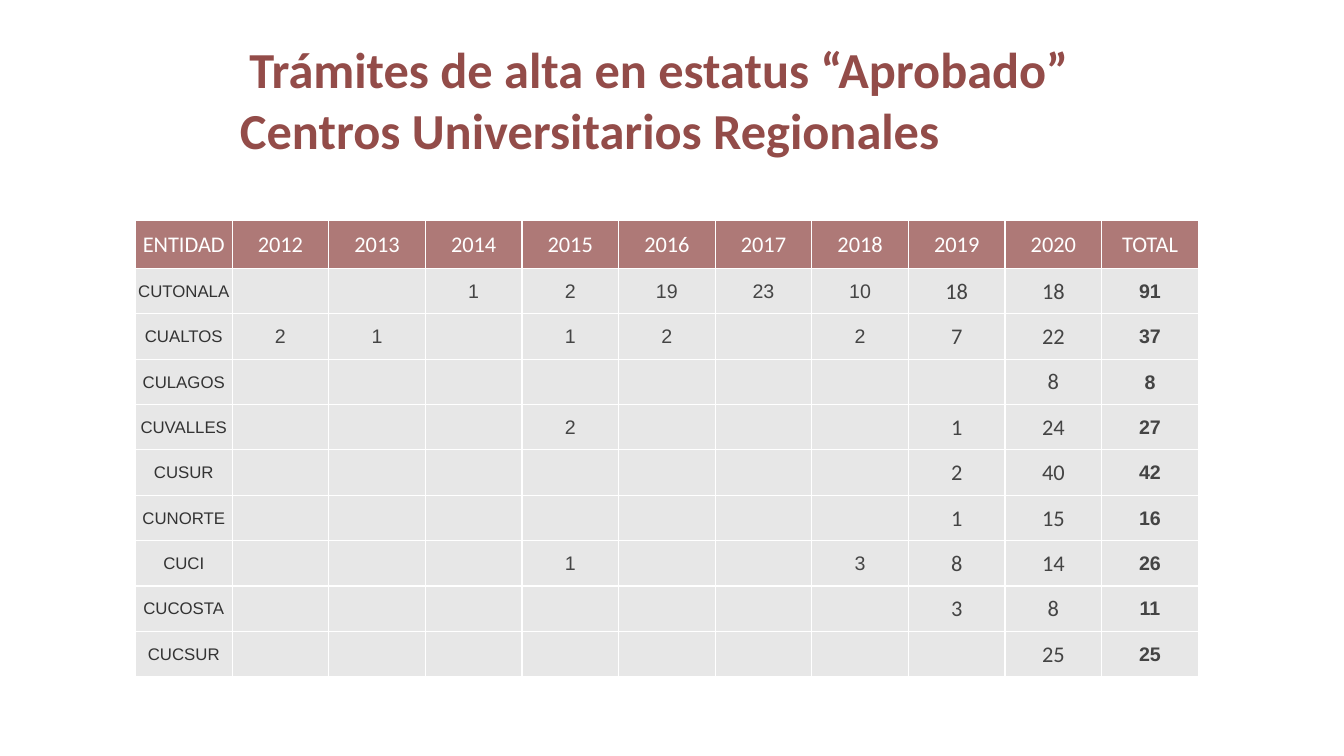
from dataclasses import dataclass

from lxml.etree import SubElement
from pptx import Presentation
from pptx.dml.color import RGBColor
from pptx.enum.text import MSO_ANCHOR as Anchor, MSO_AUTO_SIZE as AutoSize, PP_ALIGN as Align
from pptx.oxml.ns import qn
from pptx.util import Inches, Pt

SLIDE_WIDTH, SLIDE_HEIGHT = Inches(13.33), Inches(7.5)
TITLE_ONLY_LAYOUT = 5
YEARS = range(2012, 2021)
HEADER_FILL, BODY_FILL, BORDER = "AE7977", "E7E7E7", "FFFFFF"


@dataclass(frozen=True)
class TextStyle:
    size: int
    font: str
    color: str
    bold: bool = False


@dataclass(frozen=True)
class Center:
    name: str
    approved: dict[int, int]

    def row(self) -> list[str]:
        counts = [str(self.approved.get(year, "")) for year in YEARS]
        return [self.name, *counts, str(sum(self.approved.values()))]


TITLE = TextStyle(36, "Calibri", "934C49", True)
HEADER = TextStyle(16, "Calibri", "FFFFFF")
NAME = TextStyle(12, "Arial", "333333")
EARLY_YEAR = TextStyle(14, "Arial", "454545")
RECENT_YEAR = TextStyle(16, "Calibri", "444444")
TOTAL = TextStyle(14, "Arial", "444444", True)
COLUMN_STYLES = [NAME] + [EARLY_YEAR if year < 2019 else RECENT_YEAR for year in YEARS] + [TOTAL]

CENTERS = [
    Center("CUTONALA", {2014: 1, 2015: 2, 2016: 19, 2017: 23, 2018: 10, 2019: 18, 2020: 18}),
    Center("CUALTOS", {2012: 2, 2013: 1, 2015: 1, 2016: 2, 2018: 2, 2019: 7, 2020: 22}),
    Center("CULAGOS", {2020: 8}),
    Center("CUVALLES", {2015: 2, 2019: 1, 2020: 24}),
    Center("CUSUR", {2019: 2, 2020: 40}),
    Center("CUNORTE", {2019: 1, 2020: 15}),
    Center("CUCI", {2015: 1, 2018: 3, 2019: 8, 2020: 14}),
    Center("CUCOSTA", {2019: 3, 2020: 8}),
    Center("CUCSUR", {2020: 25}),
]


def rgb(value: str) -> RGBColor:
    return RGBColor.from_string(value)


def across(share: float) -> int:
    return round(SLIDE_WIDTH * share / 100)


def down(share: float) -> int:
    return round(SLIDE_HEIGHT * share / 100)


def write(paragraph, text: str, style: TextStyle, align: Align) -> None:
    paragraph.alignment = align
    run = paragraph.add_run()
    run.text = text
    run.font.size = Pt(style.size)
    run.font.name = style.font
    run.font.bold = style.bold
    run.font.color.rgb = rgb(style.color)


def add_borders(cell, color: str) -> None:
    properties = cell._tc.get_or_add_tcPr()
    for side in ("lnL", "lnR", "lnT", "lnB"):
        line = SubElement(properties, qn(f"a:{side}"), w=str(Pt(1)))
        fill = SubElement(line, qn("a:solidFill"))
        SubElement(fill, qn("a:srgbClr"), val=color)


def fill_cell(cell, text: str, style: TextStyle, fill: str) -> None:
    add_borders(cell, BORDER)
    cell.fill.solid()
    cell.fill.fore_color.rgb = rgb(fill)
    cell.vertical_anchor = Anchor.MIDDLE
    cell.margin_left = cell.margin_right = cell.margin_top = Inches(0.01)
    cell.margin_bottom = 0
    if text:
        write(cell.text_frame.paragraphs[0], text, style, Align.CENTER)


def add_title(slide) -> None:
    title = slide.shapes.title
    title.left, title.top = across(17.1), down(4.4)
    title.width, title.height = across(63.9), down(17.5)
    frame = title.text_frame
    frame.auto_size = AutoSize.NONE
    frame.word_wrap = True
    frame.vertical_anchor = Anchor.TOP
    write(frame.paragraphs[0], "Trámites de alta en estatus “Aprobado”", TITLE, Align.CENTER)
    write(frame.add_paragraph(), "Centros Universitarios Regionales", TITLE, Align.LEFT)


def add_approvals_table(slide) -> None:
    rows = [["ENTIDAD", *map(str, YEARS), "TOTAL"]] + [center.row() for center in CENTERS]
    column_count = len(rows[0])
    table = slide.shapes.add_table(
        len(rows), column_count, across(10.08), down(29.2), across(79.1), down(60.3)
    ).table
    for column in table.columns:
        column.width = across(79.1 / column_count)
    for row_index, (table_row, texts) in enumerate(zip(table.rows, rows)):
        is_header = row_index == 0
        table_row.height = down(6.3 if is_header else 6)
        for cell, text, style in zip(table_row.cells, texts, COLUMN_STYLES):
            fill_cell(cell, text, HEADER if is_header else style,
                      HEADER_FILL if is_header else BODY_FILL)


def main() -> None:
    presentation = Presentation()
    presentation.slide_width, presentation.slide_height = SLIDE_WIDTH, SLIDE_HEIGHT
    slide = presentation.slides.add_slide(presentation.slide_layouts[TITLE_ONLY_LAYOUT])
    # Heading
    add_title(slide)
    # Approved registrations by center and year
    add_approvals_table(slide)
    presentation.save("out.pptx")


if __name__ == "__main__":
    main()
